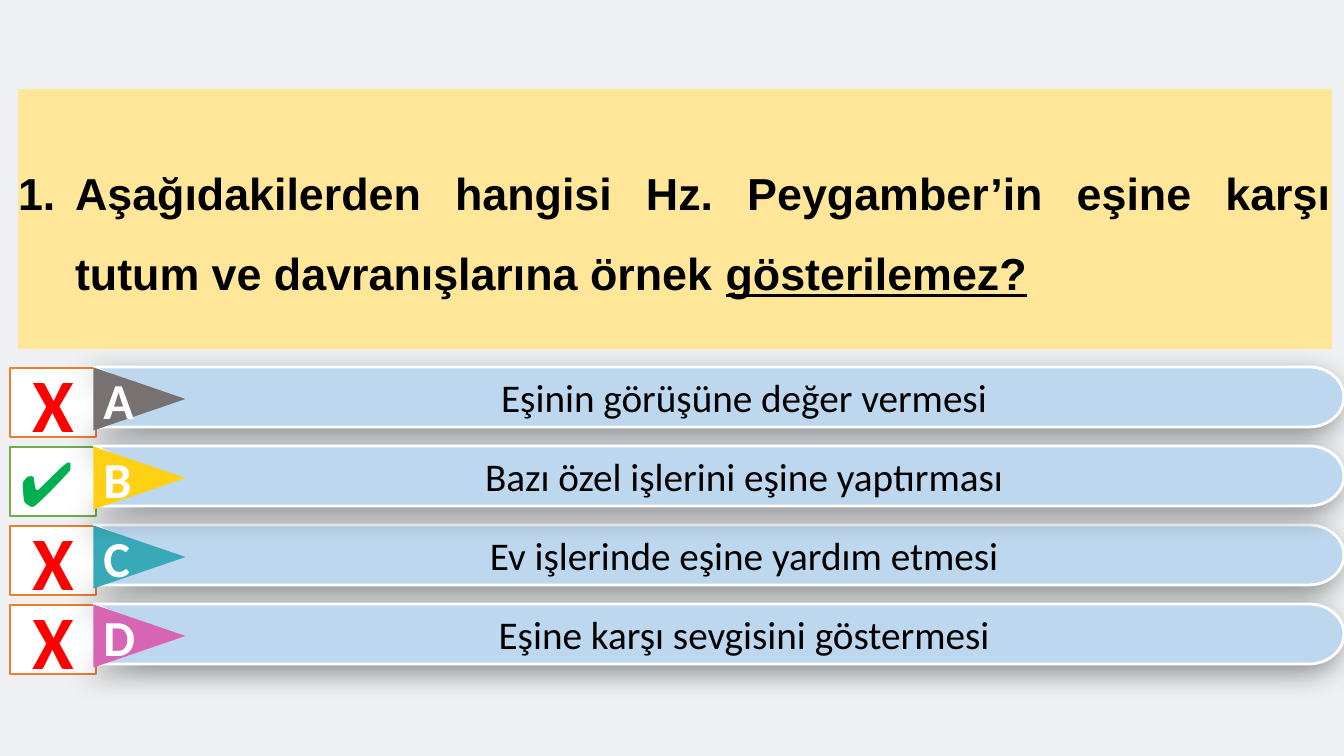
from dataclasses import dataclass
from math import cos, pi, sin

from lxml.etree import SubElement
from pptx import Presentation
from pptx.dml.color import RGBColor
from pptx.enum.shapes import MSO_SHAPE as Preset
from pptx.enum.text import MSO_ANCHOR as Anchor, MSO_AUTO_SIZE as AutoSize, PP_ALIGN as Align
from pptx.oxml.ns import qn
from pptx.util import Emu, Pt

DECK_WIDTH, DECK_HEIGHT = 1344, 756
EMU_PER_PX = 12192000 / DECK_WIDTH
ROW_PITCH = 79
BAR_LEFT, BAR_TOP, BAR_HEIGHT = 94, 367, 60
NOTCH_DEPTH, CAP_WIDTH, CAP_STEPS = 63, 35, 24


@dataclass(frozen=True)
class Mark:
    symbol: str
    size: int
    colour: str
    border: str
    bold: bool
    align: Align


@dataclass(frozen=True)
class Option:
    row: int
    letter: str
    answer: str
    colour: str
    mark: Mark


WRONG = Mark("X", 54, "FF0000", "ED7D31", True, Align.CENTER)
RIGHT = Mark("✔", 44, "00B050", "70AD47", False, Align.LEFT)
BACK_TO_FRONT = [
    Option(0, "A", "Eşinin görüşüne değer vermesi", "777171", WRONG),
    Option(2, "C", "Ev işlerinde eşine yardım etmesi", "38A9B7", WRONG),
    Option(3, "D", "Eşine karşı sevgisini göstermesi", "D864B4", WRONG),
    Option(1, "B", "Bazı özel işlerini eşine yaptırması", "FFD013", RIGHT),
]


def px(length: float) -> Emu:
    return Emu(round(length * EMU_PER_PX))


def paint(fill, colour: str) -> None:
    fill.solid()
    fill.fore_color.rgb = RGBColor.from_string(colour)


def style(shape, fill: str, border: str = "", width: float = 1) -> None:
    shape.shadow.inherit = False
    paint(shape.fill, fill)
    if border:
        paint(shape.line.fill, border)
        shape.line.width = Pt(width)
    else:
        shape.line.fill.background()


def write(para, text: str, *, size: int, colour: str = "000000", font: str = "Calibri",
          bold: bool = False, underline: bool = False, align: Align = Align.CENTER) -> None:
    para.alignment = align
    span = para.add_run()
    span.text = text
    span.font.name = font
    span.font.size = Pt(size)
    span.font.bold = bold
    span.font.underline = underline
    paint(span.font.fill, colour)


def indent(para, left: int, first: int = 0):
    properties = para._p.get_or_add_pPr()
    properties.set("marL", str(px(left)))
    properties.set("indent", str(px(first)))
    return properties


def cast_shadow(shape) -> None:
    effects = shape.element.spPr.find(qn("a:effectLst"))
    shadow = SubElement(effects, qn("a:outerShdw"), blurRad=str(Pt(20)), dist=str(Pt(7)),
                        dir="8100000", algn="tr", rotWithShape="0")
    colour = SubElement(shadow, qn("a:srgbClr"), val="000000")
    SubElement(colour, qn("a:alpha"), val="40000")


def draw_mark(shapes, option: Option) -> None:
    mark = option.mark
    box = shapes.add_shape(Preset.RECTANGLE, px(10), px(368 + option.row * ROW_PITCH), px(86), px(69))
    style(box, "FFFFFF", mark.border)
    box.text_frame.vertical_anchor = Anchor.MIDDLE
    write(box.text_frame.paragraphs[0], mark.symbol, size=mark.size, colour=mark.colour,
          bold=mark.bold, align=mark.align)


def draw_bar(shapes, option: Option) -> None:
    top = BAR_TOP + option.row * ROW_PITCH
    radius = BAR_HEIGHT / 2
    middle = top + radius
    cap_left = DECK_WIDTH - CAP_WIDTH
    angles = [pi * step / CAP_STEPS - pi / 2 for step in range(CAP_STEPS + 1)]
    outline = [(cap_left + CAP_WIDTH * cos(angle), middle + radius * sin(angle)) for angle in angles]
    outline += [(BAR_LEFT, top + BAR_HEIGHT), (BAR_LEFT + NOTCH_DEPTH, middle)]
    builder = shapes.build_freeform(px(BAR_LEFT), px(top))
    builder.add_line_segments([(px(x), px(y)) for x, y in outline], close=True)
    bar = builder.convert_to_shape()
    style(bar, "BDD7EE", "FFFFFF", 2)
    cast_shadow(bar)
    bar.text_frame.word_wrap = True
    bar.text_frame.vertical_anchor = Anchor.MIDDLE
    para = bar.text_frame.paragraphs[0]
    indent(para, 50)
    write(para, option.answer, size=28)


def draw_letter(shapes, option: Option) -> None:
    top = 353 + option.row * ROW_PITCH
    triangle = shapes.add_shape(Preset.ISOSCELES_TRIANGLE, px(108), px(top), px(63), px(92))
    triangle.rotation = 90
    style(triangle, option.colour)
    frame = triangle.text_frame
    frame.vertical_anchor = Anchor.MIDDLE
    frame._txBody.bodyPr.set("vert", "vert270")
    write(frame.paragraphs[0], option.letter, size=36, colour="FFFFFF", bold=True)


def draw_question(title) -> None:
    title.left, title.top, title.width, title.height = px(18), px(89), px(1314), px(260)
    paint(title.fill, "FFE699")
    frame = title.text_frame
    frame.word_wrap = True
    frame.auto_size = AutoSize.NONE
    frame.vertical_anchor = Anchor.MIDDLE
    frame.margin_left = frame.margin_top = frame.margin_right = frame.margin_bottom = 0
    para = frame.paragraphs[0]
    para.line_spacing = 1.5
    SubElement(indent(para, 57, -57), qn("a:buAutoNum"), type="arabicPeriod")
    question = "Aşağıdakilerden hangisi Hz. Peygamber’in eşine karşı tutum ve davranışlarına örnek "
    for text, underline in [(question, False), ("gösterilemez?", True)]:
        write(para, text, size=32, font="Arial", bold=True, underline=underline, align=Align.JUSTIFY)


def main() -> None:
    deck = Presentation()
    deck.slide_width, deck.slide_height = px(DECK_WIDTH), px(DECK_HEIGHT)
    page = deck.slides.add_slide(deck.slide_layouts[5])
    paint(page.background.fill, "EEF0F2")
    draw_question(page.shapes.title)
    for option in BACK_TO_FRONT:
        draw_mark(page.shapes, option)
    for option in BACK_TO_FRONT:
        group = page.shapes.add_group_shape()
        draw_bar(group.shapes, option)
        draw_letter(group.shapes, option)
    deck.save("out.pptx")


if __name__ == "__main__":
    main()
